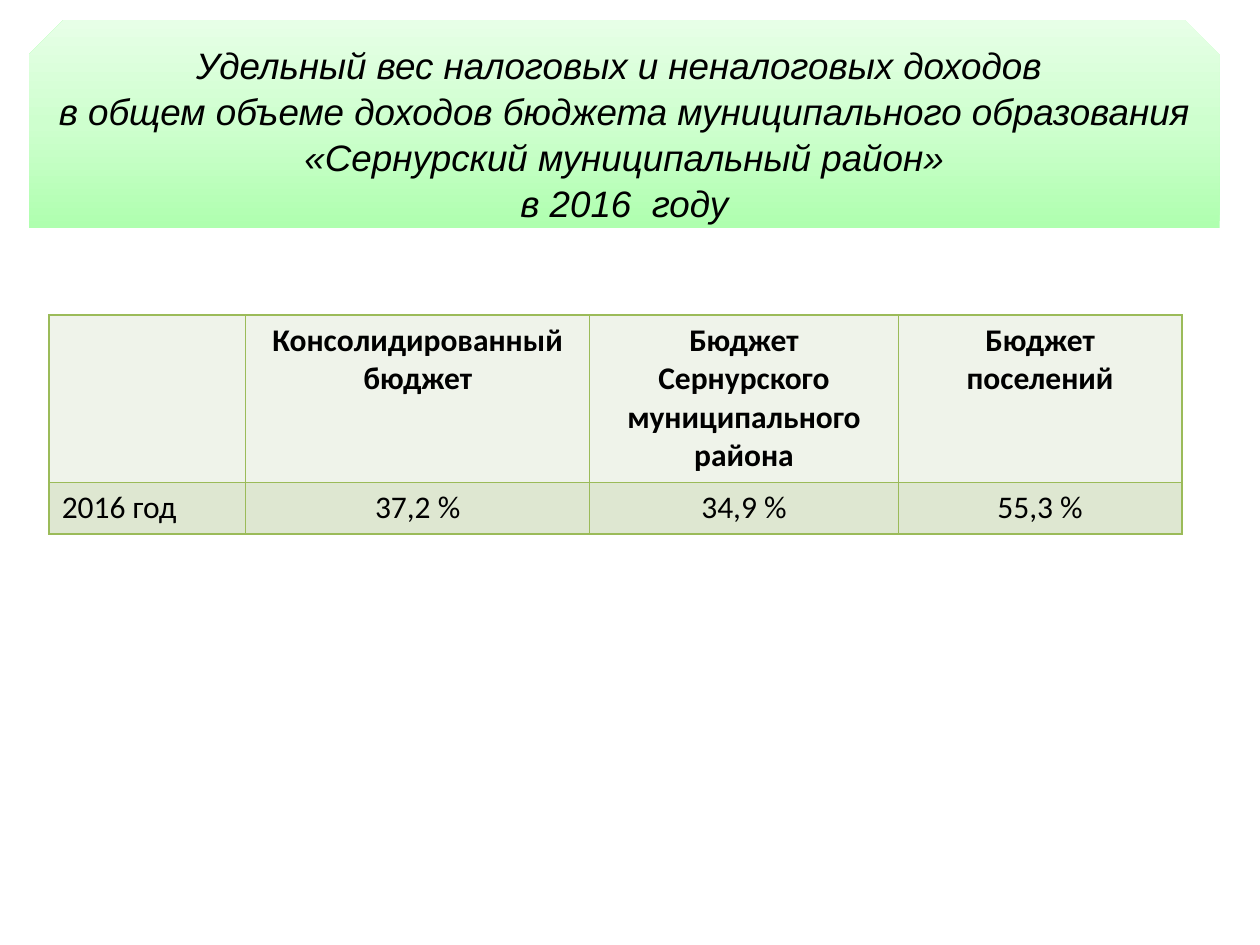
from copy import deepcopy
from dataclasses import dataclass

from lxml import etree
from pptx import Presentation
from pptx.dml.color import RGBColor
from pptx.enum.shapes import MSO_SHAPE
from pptx.enum.text import MSO_ANCHOR, PP_ALIGN
from pptx.oxml.ns import qn
from pptx.util import Inches, Pt

LEFT, CENTER = PP_ALIGN.LEFT, PP_ALIGN.CENTER
MIDDLE = MSO_ANCHOR.MIDDLE
SNIPPED = MSO_SHAPE.SNIP_2_SAME_RECTANGLE

BLACK = "000000"
BORDER = "9BBB59"
BANNER_STOPS = [(0, "AFFFAF"), (0.5, "CEFFCE"), (1, "E7FFE7")]
BANNER_LINES = [
    "Удельный вес налоговых и неналоговых доходов ",
    "в общем объеме доходов бюджета муниципального образования",
    "«Сернурский муниципальный район»",
    "в 2016  году",
]
BANNER_FONT = {"name": "Arial", "size": Pt(21), "italic": True}
COLUMN_WIDTHS = [1.56, 2.73, 2.45, 2.25]


@dataclass
class BudgetRow:
    height: float
    fill: str
    bold: bool
    texts: list[str]


BUDGET_ROWS = [
    BudgetRow(1.33, "EFF3EA", True, [
        "", "Консолидированный бюджет",
        "Бюджет Сернурского муниципального района", "Бюджет поселений"]),
    BudgetRow(0.41, "DEE7D1", False, ["2016 год", "37,2 %", "34,9 %", "55,3 %"]),
]


def color(value: str) -> RGBColor:
    return RGBColor.from_string(value)


def write(paragraph, text: str, align, font_values: dict) -> None:
    paragraph.alignment = align
    font = paragraph.add_run().font
    paragraph.runs[0].text = text
    for name, value in font_values.items():
        setattr(font, name, value)
    font.color.rgb = color(BLACK)


def add_borders(cell) -> None:
    properties = cell._tc.get_or_add_tcPr()
    for index, side in enumerate(("lnL", "lnR", "lnT", "lnB")):
        line = etree.Element(qn(f"a:{side}"), w=str(Pt(1)))
        fill = etree.SubElement(line, qn("a:solidFill"))
        etree.SubElement(fill, qn("a:srgbClr"), val=BORDER)
        properties.insert(index, line)


def draw_banner(slide) -> None:
    banner = slide.shapes.add_shape(
        SNIPPED, Inches(0.23), Inches(0.16), Inches(9.45), Inches(1.65))
    banner.shadow.inherit = False
    banner.line.fill.background()

    # Three-colour gradient, light at the top
    banner.fill.gradient()
    banner.fill.gradient_angle = 90
    stop_list = next(banner._element.spPr.iter(qn("a:gsLst")))
    stop_list.insert(1, deepcopy(stop_list[0]))
    for stop, (position, value) in zip(banner.fill.gradient_stops, BANNER_STOPS):
        stop.position = position
        stop.color.rgb = color(value)

    # Heading
    frame = banner.text_frame
    frame_values = {"word_wrap": True, "vertical_anchor": MIDDLE,
                    "margin_left": Inches(0.05), "margin_right": Inches(0.05)}
    for name, value in frame_values.items():
        setattr(frame, name, value)
    for index, text in enumerate(BANNER_LINES):
        paragraph = frame.add_paragraph() if index else frame.paragraphs[0]
        paragraph.line_spacing = 1.05
        write(paragraph, text, CENTER, BANNER_FONT)


def draw_budget_table(slide, rows: list[BudgetRow]) -> None:
    table = slide.shapes.add_table(
        len(rows), len(COLUMN_WIDTHS), Inches(0.39), Inches(2.5),
        Inches(sum(COLUMN_WIDTHS)), Inches(sum(row.height for row in rows))).table
    for column, width in zip(table.columns, COLUMN_WIDTHS):
        column.width = Inches(width)
    for row_index, row in enumerate(rows):
        table.rows[row_index].height = Inches(row.height)
        font_values = {"name": "Calibri", "size": Pt(18), "bold": row.bold}
        for column_index, text in enumerate(row.texts):
            cell = table.cell(row_index, column_index)
            cell.fill.solid()
            cell.fill.fore_color.rgb = color(row.fill)
            add_borders(cell)
            if text:
                align = CENTER if column_index else LEFT
                write(cell.text_frame.paragraphs[0], text, align, font_values)


def main() -> None:
    presentation = Presentation()
    presentation.slide_width = Inches(10)
    presentation.slide_height = Inches(7.5)
    slide = presentation.slides.add_slide(presentation.slide_layouts[6])
    draw_budget_table(slide, BUDGET_ROWS)
    draw_banner(slide)
    presentation.save("out.pptx")


if __name__ == "__main__":
    main()
